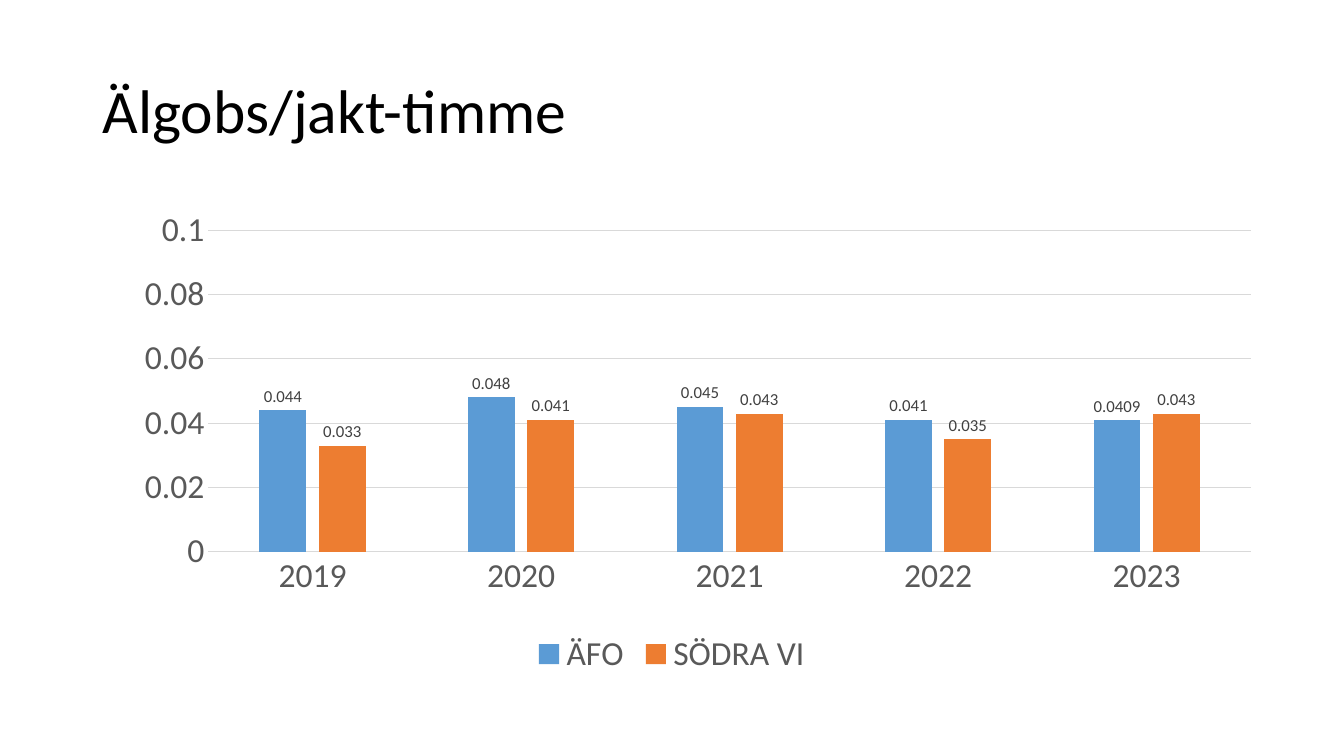
"""Builds a slide with a column chart of moose observations per hunting hour."""
from lxml.etree import SubElement
from pptx import Presentation
from pptx.chart.data import CategoryChartData
from pptx.dml.color import RGBColor
from pptx.enum.chart import XL_CHART_TYPE as ChartType
from pptx.enum.chart import XL_LABEL_POSITION as LabelPosition
from pptx.enum.chart import XL_LEGEND_POSITION as LegendPosition
from pptx.enum.chart import XL_TICK_MARK as TickMark
from pptx.enum.text import MSO_ANCHOR as Anchor
from pptx.enum.text import PP_ALIGN as Align
from pptx.oxml.ns import qn
from pptx.util import Cm, Pt

FONT = "Calibri"
COLORS = {
    "title": "000000",
    "axis": "595959",
    "label": "404040",
    "grid": "D9D9D9",
    "ÄFO": "5B9BD5",
    "SÖDRA VI": "ED7D31",
}
YEARS = ["2019", "2020", "2021", "2022", "2023"]
OBSERVATIONS = {
    "ÄFO": [0.044, 0.048, 0.045, 0.041, 0.0409],
    "SÖDRA VI": [0.033, 0.041, 0.043, 0.035, 0.043],
}
PLOT_AREA = {"x": 0.1, "y": 0.06, "w": 0.9, "h": 0.67}
LEFT, WIDTH = Cm(2.33), Cm(29.21)


def color(name):
    return RGBColor.from_string(COLORS[name])


def style_font(font, size, color_name):
    font.name = FONT
    font.size = Pt(size)
    font.bold = False
    font.color.rgb = color(color_name)


def style_line(line):
    line.color.rgb = color("grid")
    line.width = Pt(0.75)


def style_axis(axis):
    axis.major_tick_mark = axis.minor_tick_mark = TickMark.NONE
    style_font(axis.tick_labels.font, 24, "axis")


def set_title(slide, text):
    title = slide.shapes.title
    title.left, title.top, title.width, title.height = LEFT, Cm(1.01), WIDTH, Cm(3.68)
    frame = title.text_frame
    frame.text = text
    frame.vertical_anchor = Anchor.MIDDLE
    paragraph = frame.paragraphs[0]
    paragraph.alignment = Align.LEFT
    paragraph.line_spacing = 0.9
    style_font(paragraph.runs[0].font, 44, "title")


def place_plot(chart):
    plot_area = chart._chartSpace.find(".//" + qn("c:plotArea"))
    for old_layout in plot_area.findall(qn("c:layout")):
        plot_area.remove(old_layout)
    layout = SubElement(plot_area, qn("c:layout"))
    plot_area.insert(0, layout)
    manual = SubElement(layout, qn("c:manualLayout"))
    settings = {"layoutTarget": "inner", "xMode": "edge", "yMode": "edge", **PLOT_AREA}
    for tag, value in settings.items():
        SubElement(manual, qn(f"c:{tag}")).set("val", str(value))


def style_series(series):
    series.format.fill.solid()
    series.format.fill.fore_color.rgb = color(series.name)
    labels = series.data_labels
    labels.show_value = True
    labels.position = LabelPosition.OUTSIDE_END
    style_font(labels.font, 12, "label")


def add_observation_chart(slide):
    chart_data = CategoryChartData()
    chart_data.categories = YEARS
    for area, values in OBSERVATIONS.items():
        chart_data.add_series(area, values)
    chart = slide.shapes.add_chart(
        ChartType.COLUMN_CLUSTERED, LEFT, Cm(5.08), WIDTH, Cm(12.09), chart_data
    ).chart
    style_font(chart.font, 10, "title")
    chart.has_title = False

    style_axis(chart.category_axis)
    style_line(chart.category_axis.format.line)
    rate_axis = chart.value_axis
    style_axis(rate_axis)
    rate_axis.minimum_scale, rate_axis.maximum_scale = 0, 0.1
    rate_axis.major_unit = 0.02
    rate_axis.format.line.fill.background()
    style_line(rate_axis.major_gridlines.format.line)

    chart.has_legend = True
    chart.legend.position = LegendPosition.BOTTOM
    chart.legend.include_in_layout = False
    style_font(chart.legend.font, 24, "axis")

    columns = chart.plots[0]
    columns.gap_width, columns.overlap = 219, -27
    columns.vary_by_categories = False
    for series in columns.series:
        style_series(series)
    place_plot(chart)


def main():
    deck = Presentation()
    deck.slide_width, deck.slide_height = Cm(33.87), Cm(19.05)
    slide = deck.slides.add_slide(deck.slide_layouts[5])
    set_title(slide, "Älgobs/jakt-timme")
    add_observation_chart(slide)
    deck.save("out.pptx")


if __name__ == "__main__":
    main()
